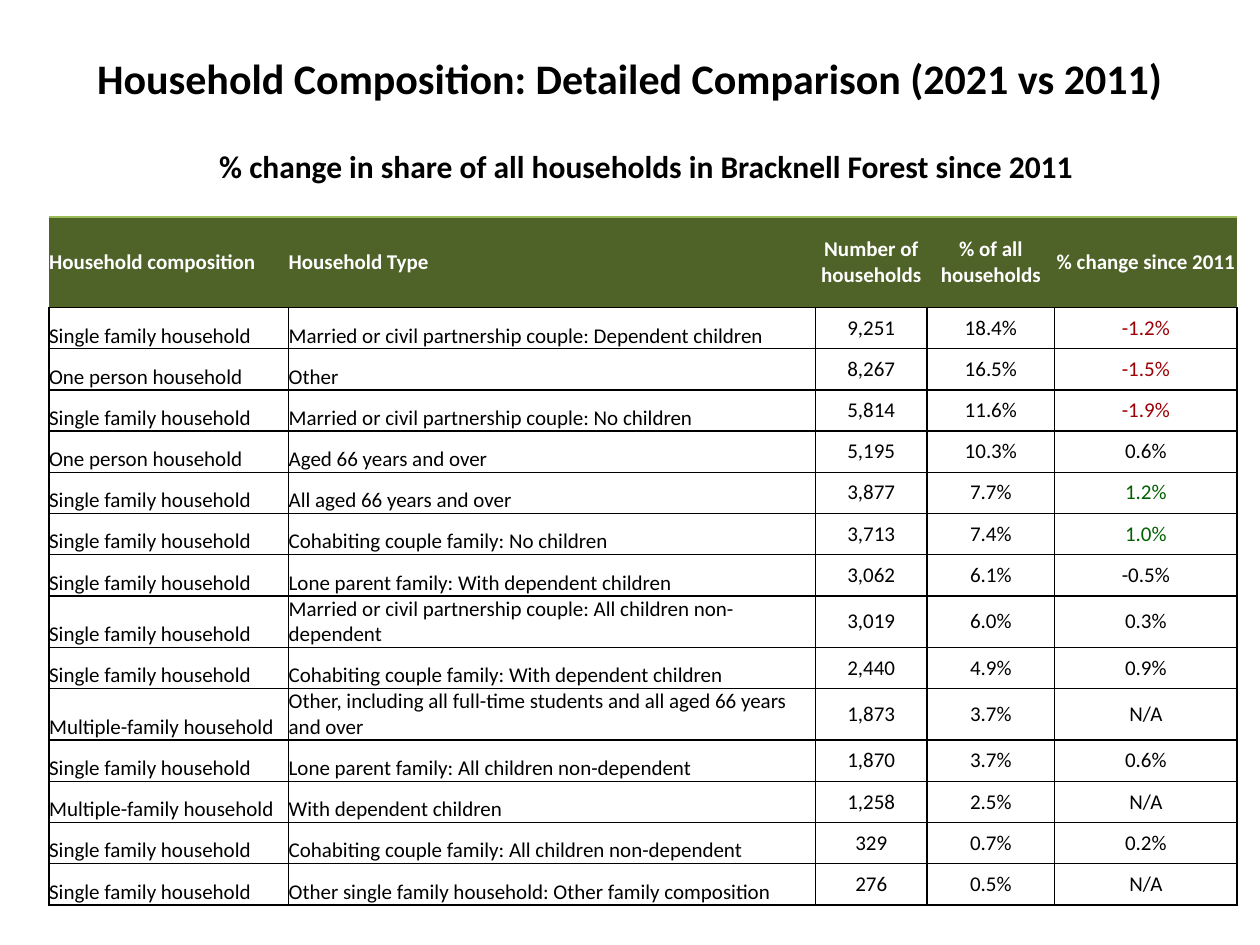
import pptx
import pptx.dml.color
import pptx.enum.text
import pptx.oxml.ns
import pptx.util
from lxml import etree

Cm, Pt = pptx.util.Cm, pptx.util.Pt
ALIGN, ANCHOR = pptx.enum.text.PP_ALIGN, pptx.enum.text.MSO_ANCHOR

TITLE = "Household Composition: Detailed Comparison (2021 vs 2011)"
SUBTITLE = "% change in share of all households in Bracknell Forest since 2011"
HEADER = ("Household composition", "Household Type", "Number of households",
          "% of all households", "% change since 2011")
SINGLE, ONE, MULTIPLE = ("Single family household", "One person household",
                         "Multiple-family household")
ROWS = [
    (SINGLE, "Married or civil partnership couple: Dependent children", "9,251", "18.4%", "-1.2%"),
    (ONE, "Other", "8,267", "16.5%", "-1.5%"),
    (SINGLE, "Married or civil partnership couple: No children", "5,814", "11.6%", "-1.9%"),
    (ONE, "Aged 66 years and over", "5,195", "10.3%", "0.6%"),
    (SINGLE, "All aged 66 years and over", "3,877", "7.7%", "1.2%"),
    (SINGLE, "Cohabiting couple family: No children", "3,713", "7.4%", "1.0%"),
    (SINGLE, "Lone parent family: With dependent children", "3,062", "6.1%", "-0.5%"),
    (SINGLE, "Married or civil partnership couple: All children non-dependent", "3,019", "6.0%", "0.3%"),
    (SINGLE, "Cohabiting couple family: With dependent children", "2,440", "4.9%", "0.9%"),
    (MULTIPLE, "Other, including all full-time students and all aged 66 years and over", "1,873", "3.7%", "N/A"),
    (SINGLE, "Lone parent family: All children non-dependent", "1,870", "3.7%", "0.6%"),
    (MULTIPLE, "With dependent children", "1,258", "2.5%", "N/A"),
    (SINGLE, "Cohabiting couple family: All children non-dependent", "329", "0.7%", "0.2%"),
    (SINGLE, "Other single family household: Other family composition", "276", "0.5%", "N/A"),
]
COL_WIDTHS = (4.83, 10.62, 2.25, 2.57, 3.68)
HEADER_HEIGHT, ROW_HEIGHT, TALL_ROW_HEIGHT = 1.83, 0.83, 1.04
ONE_LINE_CHARS = 56
BLACK, WHITE, GREEN, RED = "000000", "FFFFFF", "006100", "9C0006"
HEADER_FILL, HEADER_TOP = "4F6228", "9BBB59"
BODY_BORDERS = dict.fromkeys("LRTB", BLACK)
HEADER_BORDERS = {"L": None, "R": None, "T": HEADER_TOP, "B": BLACK}


def rgb(color):
    return pptx.dml.color.RGBColor.from_string(color)


def write(tf, text, size, color, bold, align):
    p = tf.paragraphs[0]
    p.text = text
    p.alignment = align
    font = p.font
    font.name, font.size, font.bold = "Calibri", Pt(size), bold
    font.color.rgb = rgb(color)


def add_text(s, box, text, size, align, anchor):
    tf = s.shapes.add_textbox(*map(Cm, box)).text_frame
    tf.word_wrap = True
    tf.vertical_anchor = anchor
    write(tf, text, size, BLACK, True, align)
    return tf


def set_borders(cell, colors):
    """Give each side a 1 pt line, or none where its colour is None."""
    qn = pptx.oxml.ns.qn
    tc_pr = cell._tc.get_or_add_tcPr()
    for side, color in colors.items():
        ln = etree.SubElement(tc_pr, qn(f"a:ln{side}"), w=str(Pt(1)))
        if color:
            fill = etree.SubElement(ln, qn("a:solidFill"))
            etree.SubElement(fill, qn("a:srgbClr"), val=color)
        else:
            etree.SubElement(ln, qn("a:noFill"))


def change_color(text):
    """Highlight changes of at least one percentage point."""
    change = 0 if text == "N/A" else float(text.rstrip("%"))
    return GREEN if change >= 1 else RED if change <= -1 else BLACK


def row_height(row):
    return TALL_ROW_HEIGHT if len(row[1]) > ONE_LINE_CHARS else ROW_HEIGHT


def add_table(s):
    heights = [HEADER_HEIGHT] + [row_height(row) for row in ROWS]
    table = s.shapes.add_table(len(heights), len(COL_WIDTHS), Cm(0.99), Cm(4.37),
                               Cm(sum(COL_WIDTHS)), Cm(sum(heights))).table
    table.horz_banding = False
    for column, width in zip(table.columns, COL_WIDTHS):
        column.width = Cm(width)
    for i, (row, height) in enumerate(zip([HEADER] + ROWS, heights)):
        table.rows[i].height = Cm(height)
        header = i == 0
        for j, text in enumerate(row):
            cell = table.cell(i, j)
            cell.margin_left = cell.margin_right = cell.margin_top = cell.margin_bottom = 0
            cell.vertical_anchor = ANCHOR.MIDDLE if header or j > 1 else ANCHOR.BOTTOM
            set_borders(cell, HEADER_BORDERS if header else BODY_BORDERS)
            if header:
                cell.fill.solid()
                cell.fill.fore_color.rgb = rgb(HEADER_FILL)
                color = WHITE
            else:
                cell.fill.background()
                color = change_color(text) if j == 4 else BLACK
            write(cell.text_frame, text, 12, color, header,
                  ALIGN.CENTER if j > 1 else ALIGN.LEFT)


def main():
    prs = pptx.Presentation()
    prs.slide_width, prs.slide_height = Cm(25.4), Cm(19.05)
    s = prs.slides.add_slide(prs.slide_layouts[6])
    add_text(s, (1.27, 0.76, 22.86, 1.6), TITLE, 24, ALIGN.CENTER, ANCHOR.MIDDLE)
    add_table(s)
    tf = add_text(s, (4.17, 2.84, 19, 1.02), SUBTITLE, 18, ALIGN.LEFT, ANCHOR.TOP)
    tf.auto_size = pptx.enum.text.MSO_AUTO_SIZE.SHAPE_TO_FIT_TEXT
    prs.save("out.pptx")


if __name__ == "__main__":
    main()
